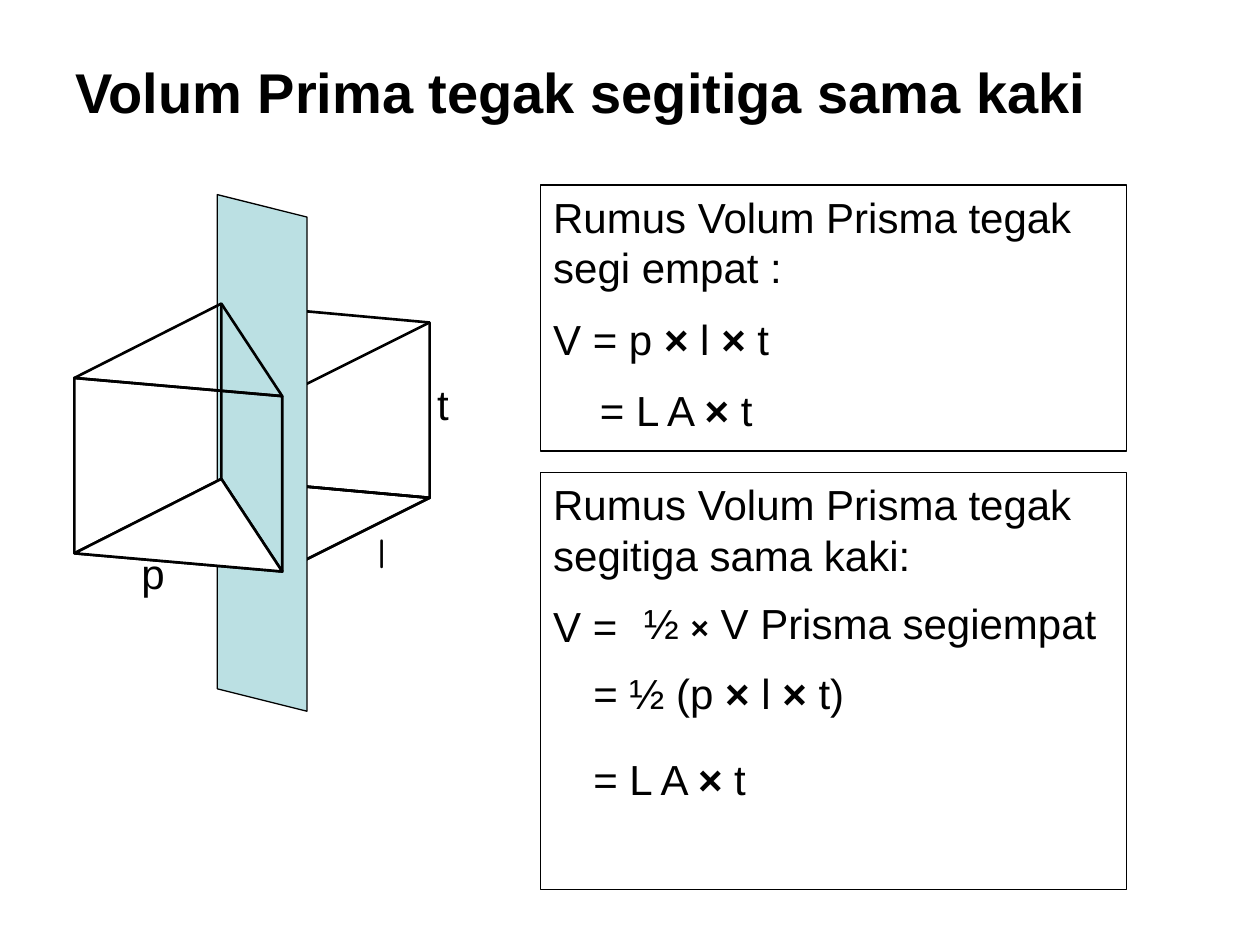
from dataclasses import dataclass
from itertools import groupby

from lxml import etree
from pptx import Presentation
from pptx.dml.color import RGBColor
from pptx.enum import shapes as kinds, text as txt
from pptx.oxml import ns
from pptx.util import Pt

BLACK = RGBColor(0, 0, 0)
WHITE = RGBColor(255, 255, 255)
TEAL = RGBColor(0xBB, 0xE0, 0xE3)
LEFT, MID = txt.PP_ALIGN.LEFT, txt.PP_ALIGN.CENTER
DROP = 100.2  # height of the prism

TOP = {"A": (42.5, 216), "B": (126.5, 173.5), "C": (161.3, 226.4), "D": (245.5, 184.3)}
# Capital letters are the top corners, small letters those of the base.
CORNER = TOP | {name.lower(): (x, y + DROP) for name, (x, y) in TOP.items()}


@dataclass
class Line:
    text: str
    indent: float = 0
    size: float = 24
    cross: float = 24
    bold: bool = False
    font: str = "Arial"
    align: int = LEFT


@dataclass
class Box:
    x: float
    y: float
    w: float
    h: float
    lines: list[Line]


@dataclass
class Path:
    corners: str
    closed: bool = True
    fill: RGBColor | None = None


BACK = [Path("bcd", fill=WHITE), Path("BDdb"), Path("dcb"), Path("cCD", closed=False), Path("CB")]
FRONT = [Path("aACc"), Path("ABC"), Path("Bba", closed=False), Path("bc"), Path("bac", fill=WHITE)]

TITLE = Box(36, 26, 648, 52.5, [Line("Volum Prima tegak segitiga sama kaki", size=32, bold=True)])
FRAMES = [
    Box(309, 105.8, 334.8, 152, [
        Line("Rumus Volum Prisma tegak segi empat :"),
        Line("V = p × l × t"),
        Line("= L A × t", indent=26.7),
    ]),
    Box(309, 270, 334.8, 238.3, [
        Line("Rumus Volum Prisma tegak segitiga sama kaki:"),
        Line("V ="),
    ]),
]
NOTES = [
    Box(332, 378, 221, 36, [Line("= ½ (p × l × t)")]),
    Box(236.2, 213, 33.8, 36, [Line("t", align=MID)]),
    Box(201.6, 297.4, 33.8, 36, [Line("l", font="Comic Neue", align=MID)]),
    Box(70.6, 309.6, 33.8, 36, [Line("p", align=MID)]),
    Box(332, 427, 221, 36, [Line("= L A × t")]),
    Box(354.2, 337.7, 311.8, 36, [Line("½ × V Prisma segiempat", indent=6.7, cross=18)]),
]


def paint(shape, fill: RGBColor | None, width: float) -> None:
    shape.shadow.inherit = False
    if fill is None:
        shape.fill.background()
    else:
        shape.fill.solid()
        shape.fill.fore_color.rgb = fill
    shape.line.color.rgb = BLACK
    shape.line.width = Pt(width)


def draw_path(host, path: Path) -> None:
    """Join the named corners: two make a connector, more an outline."""
    spots = [(Pt(x), Pt(y)) for x, y in (CORNER[name] for name in path.corners)]
    if len(spots) == 2:
        edge = host.add_connector(kinds.MSO_CONNECTOR.STRAIGHT, *spots[0], *spots[1])
        edge.line.color.rgb = BLACK
        edge.line.width = Pt(1.5)
        etree.SubElement(edge._element.spPr, ns.qn("a:effectLst"))
        return
    pen = host.build_freeform(*spots[0])
    pen.add_line_segments(spots[1:], close=path.closed)
    paint(pen.convert_to_shape(), path.fill, 1.5)


def draw_half(host, paths: list[Path]) -> None:
    group = host.add_group_shape()
    for path in paths:
        draw_path(group.shapes, path)


def draw_plane(host) -> None:
    """Draw the upright plane that cuts the prism in two."""
    plane = host.add_shape(
        kinds.MSO_SHAPE.PARALLELOGRAM, Pt(2.2), Pt(233.2), Pt(295.2), Pt(51.2))
    plane.adjustments[0] = 0.25
    plane.rotation = 270
    paint(plane, TEAL, 0.75)


def write(frame, lines: list[Line]) -> None:
    """Fill a text frame, with every times sign as a bold run."""
    frame.word_wrap = True
    for i, line in enumerate(lines):
        para = frame.add_paragraph() if i else frame.paragraphs[0]
        para.alignment = line.align
        if i:
            para.space_before = Pt(12)
        if line.indent:
            para._p.get_or_add_pPr().set("marL", str(Pt(line.indent)))
        for cross, part in groupby(line.text, lambda mark: mark == "×"):
            run = para.add_run()
            run.text = "".join(part)
            run.font.name = line.font
            run.font.size = Pt(line.cross if cross else line.size)
            run.font.bold = cross or line.bold
            run.font.color.rgb = BLACK


def draw_frame(host, box: Box) -> None:
    rect = host.add_shape(
        kinds.MSO_SHAPE.RECTANGLE, Pt(box.x), Pt(box.y), Pt(box.w), Pt(box.h))
    paint(rect, None, 0.75)
    rect.text_frame.vertical_anchor = txt.MSO_ANCHOR.TOP
    write(rect.text_frame, box.lines)


def draw_note(host, box: Box, anchor=txt.MSO_ANCHOR.TOP) -> None:
    note = host.add_textbox(Pt(box.x), Pt(box.y), Pt(box.w), Pt(box.h))
    note.text_frame.vertical_anchor = anchor
    write(note.text_frame, box.lines)


def main() -> None:
    deck = Presentation()
    deck.slide_width, deck.slide_height = Pt(720), Pt(540)
    host = deck.slides.add_slide(deck.slide_layouts[6]).shapes
    draw_half(host, BACK)
    draw_plane(host)
    draw_half(host, FRONT)
    for box in FRAMES:
        draw_frame(host, box)
    for box in NOTES:
        draw_note(host, box)
    draw_note(host, TITLE, txt.MSO_ANCHOR.MIDDLE)
    deck.save("out.pptx")


if __name__ == "__main__":
    main()
